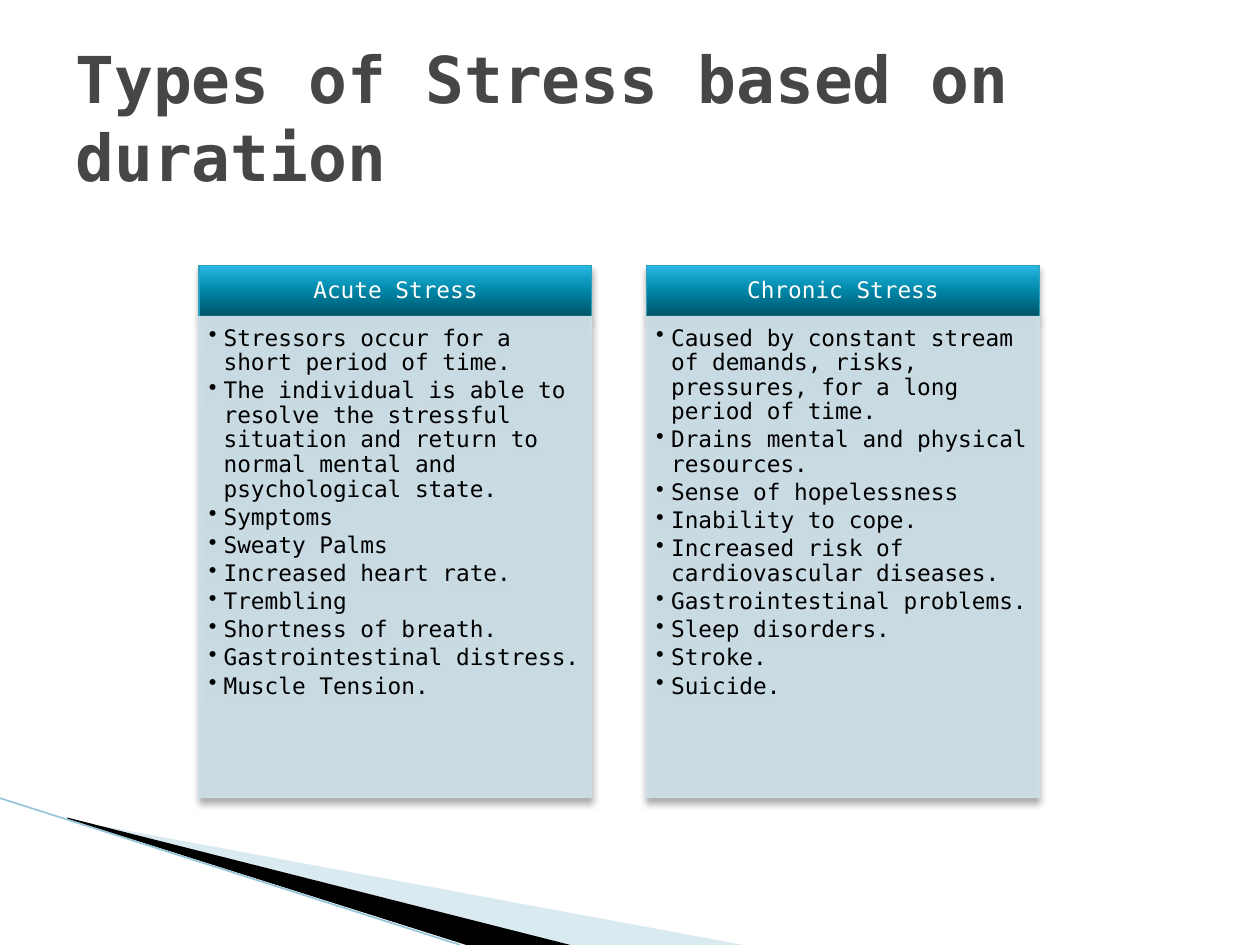
"""Build a slide that compares acute and chronic stress in two panels."""
from lxml.etree import SubElement
from pptx import Presentation
from pptx.dml.color import RGBColor
from pptx.enum.shapes import MSO_CONNECTOR as Connector, MSO_SHAPE as Shape
from pptx.enum.text import MSO_ANCHOR as Anchor, PP_ALIGN as Align
from pptx.oxml.ns import qn
from pptx.util import Cm, Pt

TITLE = "Types of Stress based on duration"
COLUMNS = [
    ("Acute Stress", [
        "Stressors occur for a short period of time.",
        "The individual is able to resolve the stressful situation and return "
        "to normal mental and psychological state.",
        "Symptoms",
        "Sweaty Palms",
        "Increased heart rate.",
        "Trembling",
        "Shortness of breath.",
        "Gastrointestinal distress.",
        "Muscle Tension.",
    ]),
    ("Chronic Stress", [
        "Caused by constant stream of demands, risks, pressures, for a long "
        "period of time.",
        "Drains mental and physical resources.",
        "Sense of hopelessness",
        "Inability to cope.",
        "Increased risk of cardiovascular diseases.",
        "Gastrointestinal problems.",
        "Sleep disorders.",
        "Stroke.",
        "Suicide.",
    ]),
]

FONT = "DejaVu Sans Mono"
WHITE = RGBColor(0xFF, 0xFF, 0xFF)
BLACK = RGBColor(0x00, 0x00, 0x00)
GREY = RGBColor(0x46, 0x46, 0x46)
TEAL = RGBColor(0x2D, 0xA2, 0xBF)
PALE = RGBColor(0xCD, 0xE0, 0xE8)
SKY = RGBColor(0xA0, 0xCB, 0xDC)
EDGE = RGBColor(0x97, 0xC5, 0xD8)
HEADER_STOPS = [
    (0, RGBColor(0x00, 0x53, 0x67)),
    (50, RGBColor(0x00, 0x86, 0xA7)),
    (70, RGBColor(0x0E, 0x9A, 0xBE)),
    (100, RGBColor(0x2C, 0xB9, 0xE3)),
]

WEDGES = [
    ([(1.4, 16.53), (14.99, 19.05), (11.5, 19.05), (1.4, 16.51)], SKY, 40),
    ([(1.35, 16.48), (11.5, 19.05), (9.4, 19.05), (1.37, 16.51)], BLACK, 100),
]
LEFT, PITCH, WIDTH = 4.01, 9.02, 7.92
HEADER_TOP, HEADER_HEIGHT = 5.35, 1.03
PANEL_TOP, PANEL_HEIGHT = HEADER_TOP + HEADER_HEIGHT, 9.7

TITLE_FONT = {"name": FONT, "size": Pt(36.9), "bold": True}
BODY_FONT = {"name": FONT, "size": Pt(13), "bold": False}


def set_values(target, values):
    for name, value in values.items():
        setattr(target, name, value)


def set_alpha(color_format, percent):
    color = color_format._xFill.find(qn("a:srgbClr"))
    SubElement(color, qn("a:alpha"), val=str(percent * 1000))


def set_frame(box, anchor, margins):
    sides = ("margin_left", "margin_top", "margin_right", "margin_bottom")
    set_values(box.text_frame, {"word_wrap": True, "vertical_anchor": anchor})
    set_values(box.text_frame, dict(zip(sides, map(Cm, margins))))


def write(box, texts, font, color, layout, bullet=False):
    frame = box.text_frame
    for index, text in enumerate(texts):
        para = frame.add_paragraph() if index else frame.paragraphs[0]
        para.add_run().text = text
        set_values(para, layout)
        if bullet:
            props = para._p.get_or_add_pPr()
            props.set("marL", str(Cm(0.3)))
            props.set("indent", str(Cm(-0.3)))
            SubElement(props, qn("a:buChar"), char="•")
        set_values(para.runs[0].font, font)
        para.runs[0].font.color.rgb = color


def add_shadow(box):
    box.shadow.inherit = False
    effects = box._element.spPr.find(qn("a:effectLst"))
    shadow = SubElement(effects, qn("a:outerShdw"), blurRad=str(Pt(4)),
                        dist=str(Pt(3)), dir="5400000", rotWithShape="0")
    color = SubElement(shadow, qn("a:srgbClr"), val=str(BLACK))
    SubElement(color, qn("a:alpha"), val="35000")


def add_block(page, left, top, height, line_color):
    box = page.shapes.add_shape(
        Shape.RECTANGLE, Cm(left), Cm(top), Cm(WIDTH), Cm(height))
    box.line.color.rgb = line_color
    box.line.width = Pt(0.75)
    add_shadow(box)
    return box


def fill_header(box):
    box.fill.gradient()
    box.fill.gradient_angle = 90
    stops = box._element.spPr.find(qn("a:gradFill")).find(qn("a:gsLst"))
    for stop in list(stops):
        stops.remove(stop)
    for position, color in HEADER_STOPS:
        stop = SubElement(stops, qn("a:gs"), pos=str(position * 1000))
        SubElement(stop, qn("a:srgbClr"), val=str(color))


def fill_solid(box, color, percent):
    box.fill.solid()
    box.fill.fore_color.rgb = color
    if percent < 100:
        set_alpha(box.fill.fore_color, percent)


def add_column(page, left, heading, points):
    panel_layout = {"alignment": Align.LEFT, "line_spacing": 0.9, "space_after": Pt(2)}
    header = add_block(page, left, HEADER_TOP, HEADER_HEIGHT, TEAL)
    fill_header(header)
    set_frame(header, Anchor.MIDDLE, (0.25, 0.15, 0.25, 0.15))
    write(header, [heading], BODY_FONT, WHITE,
          {"alignment": Align.CENTER, "line_spacing": 0.9})

    panel = add_block(page, left, PANEL_TOP, PANEL_HEIGHT, PALE)
    fill_solid(panel, PALE, 90)
    set_alpha(panel.line.color, 90)
    set_frame(panel, Anchor.TOP, (0.2, 0.2, 0.25, 0.28))
    write(panel, points, BODY_FONT, BLACK, panel_layout, bullet=True)


def add_corner(page):
    for points, color, percent in WEDGES:
        start, *rest = [(Cm(x), Cm(y)) for x, y in points]
        builder = page.shapes.build_freeform(*start)
        builder.add_line_segments(rest, close=True)
        wedge = builder.convert_to_shape()
        fill_solid(wedge, color, percent)
        wedge.line.fill.background()
        wedge.shadow.inherit = False
    edge = page.shapes.add_connector(
        Connector.STRAIGHT, Cm(0), Cm(16.09), Cm(9.28), Cm(19.05))
    edge.line.color.rgb = EDGE
    edge.line.width = Pt(0.95)
    SubElement(edge._element.spPr, qn("a:effectLst"))


def main():
    deck = Presentation()
    deck.slide_width, deck.slide_height = Cm(25.4), Cm(19.05)
    page = deck.slides.add_slide(deck.slide_layouts[6])
    add_corner(page)
    title = page.shapes.add_textbox(Cm(1.27), Cm(0.76), Cm(22.86), Cm(3.18))
    set_frame(title, Anchor.MIDDLE, (0.25, 0.13, 0.25, 0.13))
    write(title, [TITLE], TITLE_FONT, GREY, {"alignment": Align.LEFT})
    for index, (heading, points) in enumerate(COLUMNS):
        add_column(page, LEFT + index * PITCH, heading, points)
    deck.save("out.pptx")


if __name__ == "__main__":
    main()
